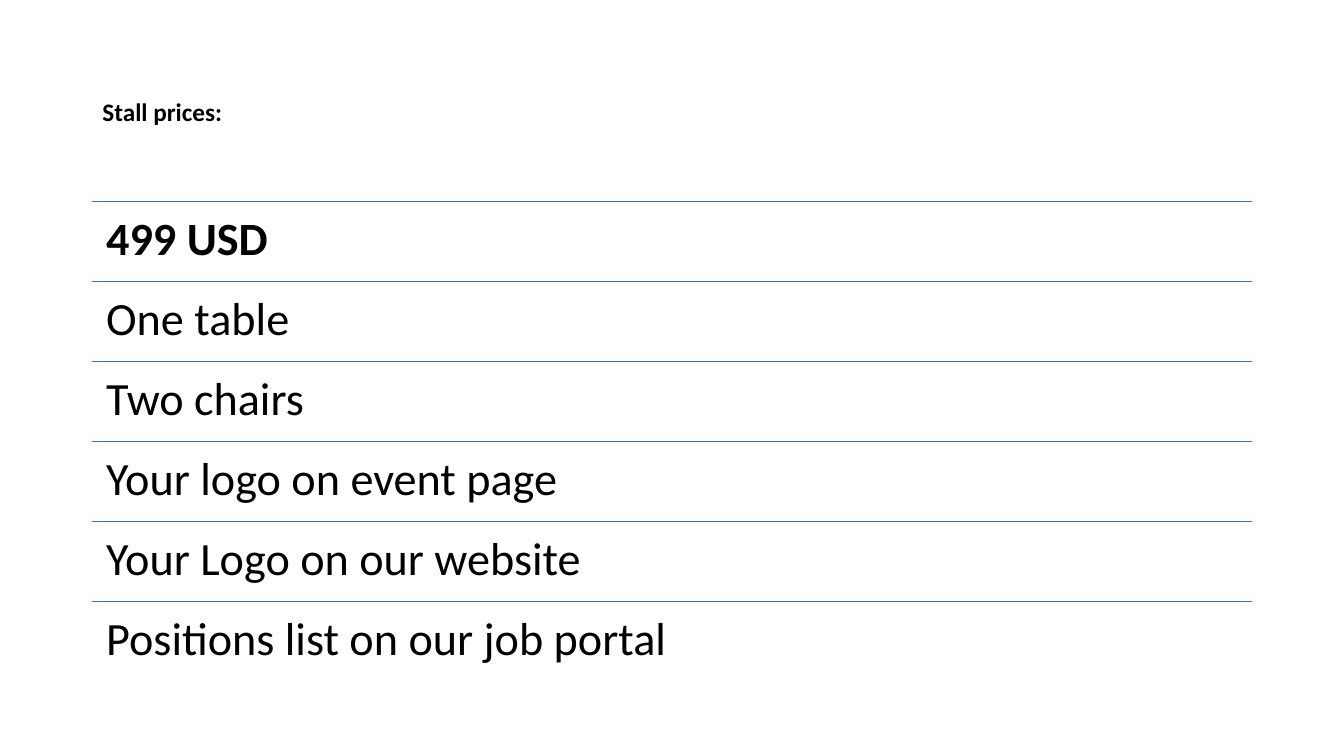
from pptx import Presentation
from pptx.dml.color import RGBColor
from pptx.enum.shapes import MSO_CONNECTOR
from pptx.enum.text import MSO_ANCHOR, MSO_AUTO_SIZE, PP_ALIGN
from pptx.oxml.ns import qn
from pptx.util import Pt

BLACK = RGBColor(0x00, 0x00, 0x00)
BLUE = RGBColor(0x44, 0x72, 0xC4)
FONT = "Calibri"

LEFT, WIDTH = 66, 828
ROWS_TOP, ROW_HEIGHT = 144, 57.1

PRICE = "499 USD"
BENEFITS = [
    "One table",
    "Two chairs",
    "Your logo on event page",
    "Your Logo on our website",
    "Positions list on our job portal",
]


def write_text(shape, text, size, bold=False, anchor=MSO_ANCHOR.TOP,
               inset_x=7.2, inset_y=3.6):
    frame = shape.text_frame
    frame.word_wrap = True
    frame.auto_size = MSO_AUTO_SIZE.NONE
    frame.vertical_anchor = anchor
    frame.margin_left = frame.margin_right = Pt(inset_x)
    frame.margin_top = frame.margin_bottom = Pt(inset_y)
    paragraph = frame.paragraphs[0]
    paragraph.alignment = PP_ALIGN.LEFT
    paragraph.line_spacing = 0.9
    run = paragraph.add_run()
    run.text = text
    run.font.name = FONT
    run.font.size = Pt(size)
    run.font.bold = bold
    run.font.color.rgb = BLACK


def add_title(slide, text):
    title = slide.shapes.title
    title.left, title.top = Pt(LEFT), Pt(28.8)
    title.width, title.height = Pt(WIDTH), Pt(104.4)
    write_text(title, text, 18, bold=True, anchor=MSO_ANCHOR.MIDDLE)


def add_rule(slide, top):
    rule = slide.shapes.add_connector(
        MSO_CONNECTOR.STRAIGHT, Pt(LEFT), Pt(top), Pt(LEFT + WIDTH), Pt(top))
    rule.line.color.rgb = BLUE
    rule.line.width = Pt(1)
    properties = rule.line._get_or_add_ln().getparent()
    properties.append(properties.makeelement(qn("a:effectLst"), {}))


def add_row(slide, top, text, bold=False):
    """Add a line of the price list with a rule above it."""
    add_rule(slide, top)
    box = slide.shapes.add_textbox(Pt(LEFT), Pt(top), Pt(WIDTH), Pt(ROW_HEIGHT))
    write_text(box, text, 33, bold=bold, inset_x=9.9, inset_y=9.9)


def main():
    presentation = Presentation()
    presentation.slide_width, presentation.slide_height = Pt(960), Pt(540)
    slide = presentation.slides.add_slide(presentation.slide_layouts[5])
    add_title(slide, "Stall prices:")
    for index, text in enumerate([PRICE, *BENEFITS]):
        add_row(slide, ROWS_TOP + index * ROW_HEIGHT, text, bold=text == PRICE)
    presentation.save("out.pptx")


if __name__ == "__main__":
    main()
